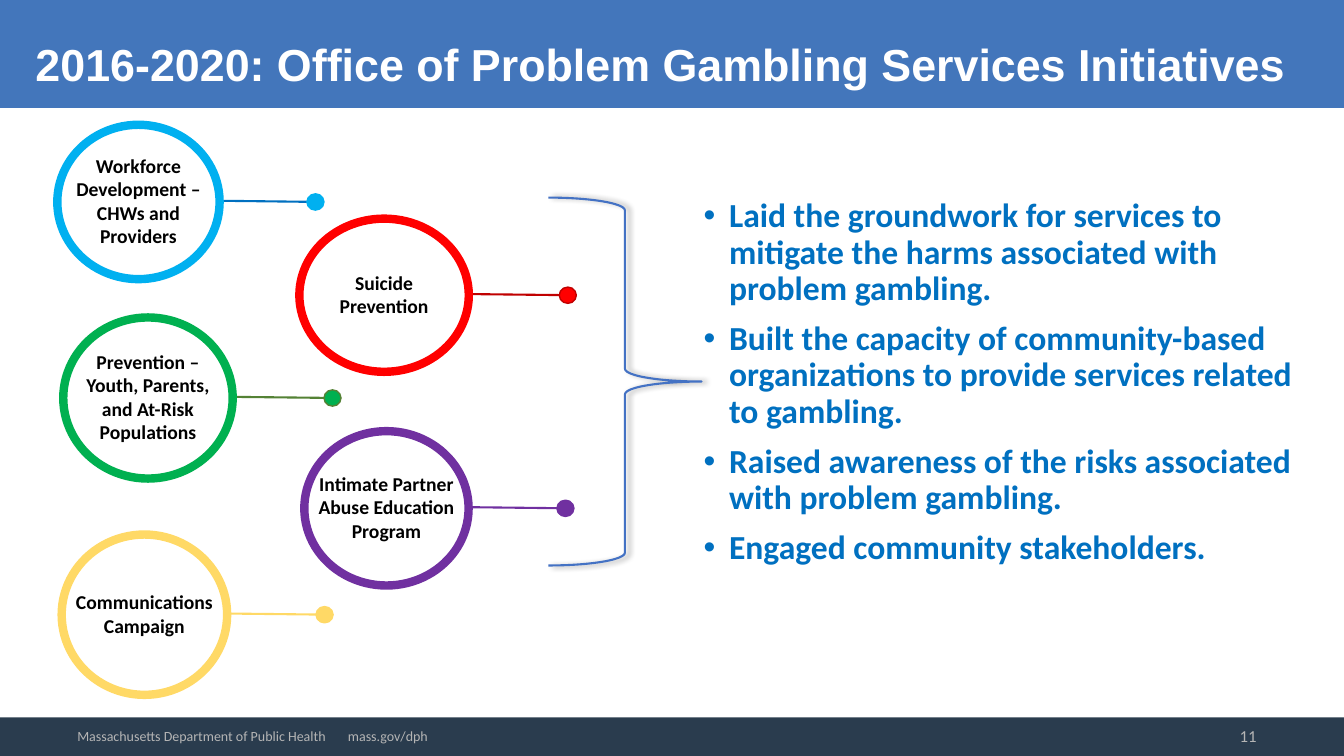
from dataclasses import dataclass

from lxml import etree
from pptx import Presentation
from pptx import util as u
from pptx.dml import color
from pptx.enum import shapes as sh
from pptx.enum import text as tx
from pptx.oxml import ns

HUES = {
    "banner": "4376BB", "footer": "2A3C4E", "muted": "B5B5B5",
    "white": "FFFFFF", "black": "000000", "body": "0070C0",
    "sky": "00B0F0", "green": "00B050", "olive": "548235",
    "red": "FF0000", "wine": "C00000", "purple": "7030A0",
    "gold": "FFD966", "brace": "4472C4",
}
WIDE, HIGH = 33.87, 19.05
DOT_W, DOT_H = 0.43, 0.41
LABEL_W, LABEL_H = 3.55, 2.1
RISE = 0.03


@dataclass
class Node:
    """A ringed label whose stem ends in a dot; lengths in cm."""
    label: str
    x: float
    y: float
    w: float
    h: float
    dot_x: float
    ring: str
    stem: str
    edge: str


NODES = [
    Node("Workforce Development – CHWs and Providers",
         3.49, 5.09, 4.09, 3.89, 7.95, "sky", "body", "sky"),
    Node("Prevention – Youth, Parents, and At-Risk Populations",
         3.73, 10.03, 4.27, 4.06, 8.38, "green", "olive", "olive"),
    Node("Suicide Prevention",
         9.68, 7.44, 4.27, 3.86, 14.31, "red", "wine", "wine"),
    Node("Intimate Partner Abuse Education Program",
         9.74, 12.81, 4.14, 3.89, 14.25, "purple", "purple", "purple"),
    Node("Communications Campaign",
         3.64, 15.49, 4.17, 4.04, 8.18, "gold", "gold", "gold"),
]
GOALS = [
    "Laid the groundwork for services to mitigate the harms associated "
    "with problem gambling.",
    "Built the capacity of community-based organizations to provide "
    "services related to gambling.",
    "Raised awareness of the risks associated with problem gambling.",
    "Engaged community stakeholders.",
]


def rgb(name: str) -> color.RGBColor:
    return color.RGBColor.from_string(HUES[name])


def sub(node, tag: str, **attrs):
    return etree.SubElement(node, ns.qn(tag), attrs)


def place(shape, x: float, y: float, w: float, h: float) -> None:
    shape.left, shape.top = u.Cm(x), u.Cm(y)
    shape.width, shape.height = u.Cm(w), u.Cm(h)


def write(shape, *lines: str, size: float, hue: str, font: str = "Calibri",
          bold: bool = False, align=tx.PP_ALIGN.LEFT,
          anchor=tx.MSO_ANCHOR.MIDDLE, inset: bool = True) -> list:
    """Fill a shape with one paragraph per line and return the paragraphs."""
    frame = shape.text_frame
    frame.word_wrap = True
    frame.auto_size = tx.MSO_AUTO_SIZE.NONE
    frame.vertical_anchor = anchor
    if not inset:
        frame.margin_left = frame.margin_right = 0
        frame.margin_top = frame.margin_bottom = 0
    for i, line in enumerate(lines):
        para = frame.paragraphs[0] if i == 0 else frame.add_paragraph()
        para.alignment = align
        run = para.add_run()
        run.text = line
        run.font.name, run.font.size = font, u.Pt(size)
        run.font.bold, run.font.color.rgb = bold, rgb(hue)
    return list(frame.paragraphs)


def draw(slide, kind, x: float, y: float, w: float, h: float,
         fill: str = "", line: str = "", width: float = 1):
    shape = slide.shapes.add_shape(kind, u.Cm(x), u.Cm(y), u.Cm(w), u.Cm(h))
    shape.shadow.inherit = False
    if fill:
        shape.fill.solid()
        shape.fill.fore_color.rgb = rgb(fill)
    else:
        shape.fill.background()
    if line:
        shape.line.color.rgb, shape.line.width = rgb(line), u.Pt(width)
    else:
        shape.line.fill.background()
    return shape


def box(slide, x: float, y: float, w: float, h: float):
    return slide.shapes.add_textbox(u.Cm(x), u.Cm(y), u.Cm(w), u.Cm(h))


def oval(slide, x: float, y: float, w: float, h: float, **style):
    """Draw an ellipse around its centre."""
    return draw(slide, sh.MSO_SHAPE.OVAL, x - w / 2, y - h / 2, w, h, **style)


def add_node(slide, node: Node) -> None:
    label = box(slide, node.x - LABEL_W / 2, node.y - LABEL_H / 2 - RISE,
                LABEL_W, LABEL_H)
    write(label, node.label, size=14, hue="black", bold=True,
          align=tx.PP_ALIGN.CENTER, inset=False)
    stem = slide.shapes.add_connector(
        sh.MSO_CONNECTOR.STRAIGHT,
        u.Cm(node.dot_x + DOT_W / 2), u.Cm(node.y),
        u.Cm(node.x + node.w / 2), u.Cm(node.y - RISE))
    stem.line.color.rgb, stem.line.width = rgb(node.stem), u.Pt(1.5)
    sub(stem.element.spPr, "a:effectLst")
    oval(slide, node.dot_x, node.y, DOT_W, DOT_H,
         fill=node.ring, line=node.edge)
    oval(slide, node.x, node.y, node.w, node.h, line=node.ring, width=6)


def add_frame(slide) -> None:
    """Add the banner and footer, with the banner behind the title."""
    title = slide.shapes.title
    rect = sh.MSO_SHAPE.RECTANGLE
    banner = draw(slide, rect, 0, 0, WIDE, 2.72, fill="banner")
    title.element.addprevious(banner.element)
    draw(slide, rect, 0, 18.08, WIDE, HIGH - 18.08, fill="footer")
    place(title, 0.64, 0.81, 33.6, 1.63)
    write(title, "2016-2020: Office of Problem Gambling Services Initiatives",
          size=32, hue="white", font="Arial", bold=True,
          anchor=tx.MSO_ANCHOR.TOP)
    write(box(slide, 24.33, 18.03, 7.59, 1.02), "11", size=12, hue="muted",
          align=tx.PP_ALIGN.RIGHT)
    credit = write(box(slide, 1.7, 18.08, 10.59, 0.94),
                   "Massachusetts Department of Public Health\tmass.gov/dph",
                   size=10, hue="muted")[0]
    tabs = sub(credit._p.get_or_add_pPr(), "a:tabLst")
    sub(tabs, "a:tab", pos=str(u.Cm(6.82)), algn="l")


def add_goals(slide) -> None:
    body = slide.placeholders[1]
    place(body, 17.48, 4.88, 15.47, 9.63)
    for para in write(body, *GOALS, size=24, hue="body", bold=True,
                      anchor=tx.MSO_ANCHOR.TOP):
        para.line_spacing, para.space_before = 0.9, u.Pt(10)
        props = para._p.get_or_add_pPr()
        indent = u.Cm(0.64)
        props.set("marL", str(indent))
        props.set("indent", str(-indent))
        sub(props, "a:buFont", typeface="Arial")
        sub(props, "a:buChar", char="•")


def add_brace(slide) -> None:
    brace = draw(slide, sh.MSO_SHAPE.RIGHT_BRACE, 13.82, 4.98, 3.86, 9.27,
                 line="brace", width=1.5)
    glow = brace.element.spPr.find(ns.qn("a:effectLst"))
    shade = sub(glow, "a:outerShdw", blurRad=str(u.Pt(4)),
                dist=str(u.Pt(3)), dir="0", algn="l", rotWithShape="0")
    tint = sub(shade, "a:srgbClr", val=HUES["black"])
    sub(tint, "a:alpha", val="40000")


def main() -> None:
    deck = Presentation()
    deck.slide_width, deck.slide_height = u.Cm(WIDE), u.Cm(HIGH)
    slide = deck.slides.add_slide(deck.slide_layouts[1])
    add_frame(slide)
    for node in NODES:
        add_node(slide, node)
    add_goals(slide)
    add_brace(slide)
    deck.save("out.pptx")


if __name__ == "__main__":
    main()
